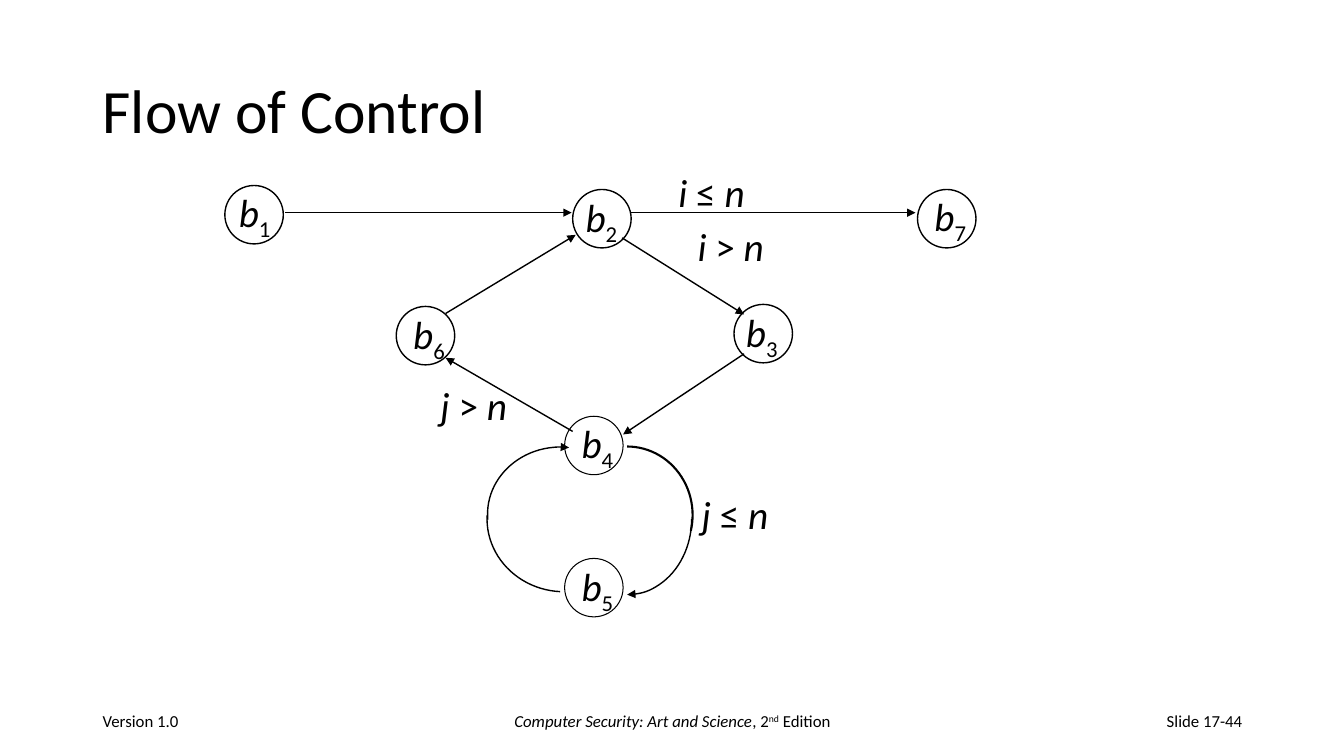
import pptx
import pptx.dml.color
import pptx.enum.shapes
import pptx.enum.text
import pptx.oxml
import pptx.oxml.ns
import pptx.util

PX = 9144  # EMU; 100 px to the inch
THEME = {
    "font": "Calibri",
    "ink": pptx.dml.color.RGBColor(0, 0, 0),
    "title": 44,
    "label": 28,
    "foot": 12,
}
ALIGN = pptx.enum.text.PP_ALIGN
ANCHOR = pptx.enum.text.MSO_ANCHOR
KIND = pptx.enum.shapes.MSO_SHAPE

deck = pptx.Presentation()
deck.slide_width = 1333 * PX
deck.slide_height = 750 * PX
slide = deck.slides.add_slide(deck.slide_layouts[6])
shapes = slide.shapes


def write(runs, box, size, align=ALIGN.LEFT, anchor=ANCHOR.TOP, wrap=True, lead=None):
    """Add a text box; each run is (text, italic, baseline shift in percent)."""
    frame = shapes.add_textbox(*[n * PX for n in box]).text_frame
    frame.word_wrap = wrap
    frame.vertical_anchor = anchor
    para = frame.paragraphs[0]
    para.alignment = align
    para.line_spacing = lead
    for text, slant, shift in runs:
        run = para.add_run()
        run.text = text
        run.font.name = THEME["font"]
        run.font.size = pptx.util.Pt(size)
        run.font.italic = slant
        run.font.color.rgb = THEME["ink"]
        if shift:
            run.font._element.set("baseline", str(shift * 1000))


def stroke(shape, width, arrow=False):
    """Give a shape or connector a plain line, with an arrowhead if asked."""
    shape.line.color.rgb = THEME["ink"]
    shape.line.width = pptx.util.Pt(width)
    if arrow:
        tip = pptx.oxml.parse_xml(
            f'<a:tailEnd {pptx.oxml.ns.nsdecls("a")} type="triangle"/>')
        shape.line._get_or_add_ln().append(tip)


write([("Flow of Control", False, 0)], (92, 40, 1150, 145), THEME["title"],
      anchor=ANCHOR.MIDDLE, lead=0.9)

# Nodes: number, circle left and top, label left and top, line width
nodes = [
    (1, 223, 184, 227, 182, 1),
    (2, 568, 188, 571, 187, 1),
    (7, 910, 188, 917, 186, 1),
    (6, 393, 304, 400, 303, 1),
    (3, 728, 302, 730, 301, 1),
    (4, 560, 413, 567, 411, 0.75),
    (5, 560, 554, 567, 553, 0.75),
]
for num, left, top, x, y, width in nodes:
    ring = shapes.add_shape(KIND.OVAL, left * PX, top * PX, 58 * PX, 58 * PX)
    ring.shadow.inherit = False
    ring.fill.background()
    stroke(ring, width)
    write([("b", True, 0), (str(num), False, -25)], (x, y, 54, 57),
          THEME["label"], wrap=False)

# Straight edges, each from its start to its arrowhead
edges = [
    (283, 211, 567, 211),
    (625, 211, 908, 211),
    (617, 236, 738, 312),
    (568, 428, 442, 355),
    (442, 311, 571, 233),
    (738, 351, 618, 431),
]
for ends in edges:
    edge = shapes.add_connector(pptx.enum.shapes.MSO_CONNECTOR.STRAIGHT,
                                *[n * PX for n in ends])
    stroke(edge, 1, arrow=True)
    edge._element.spPr.append(
        pptx.oxml.parse_xml(f'<a:effectLst {pptx.oxml.ns.nsdecls("a")}/>'))

# Loop between b4 and b5: frame, turn, end angle, line width, arrowhead
arcs = [
    ((557, 443, 130, 136), 0, 8.35, 1.5, False),
    ((547, 451, 150, 128), 90, 0, 1, True),
    ((483, 443, 152, 144), 182.8, 0, 1, False),
    ((489, 438, 131, 142), 264.7, 8.35, 1, True),
]
for box, turn, end, width, arrow in arcs:
    arc = shapes.add_shape(KIND.ARC, *[n * PX for n in box])
    arc.shadow.inherit = False
    arc.fill.background()
    arc.rotation = turn
    arc.adjustments[0] = 162
    arc.adjustments[1] = end
    stroke(arc, width, arrow)

# Conditions on the edges
tests = [
    ("i", ">", (682, 216, 125, 57)),
    ("i", "≤", (663, 162, 90, 57)),
    ("j", ">", (427, 373, 110, 57)),
    ("j", "≤", (686, 482, 105, 57)),
]
for name, sign, box in tests:
    write([(name, True, 0), (f" {sign} ", False, 0), ("n", True, 0)], box,
          THEME["label"])

book = [("Computer Security: Art and Science", True, 0), (", 2", False, 0),
        ("nd", False, 30), (" Edition", False, 0)]
feet = [
    ([("Version 1.0", False, 0)], 92, 300, ALIGN.LEFT),
    (book, 442, 450, ALIGN.CENTER),
    ([("Slide 17-44", False, 0)], 942, 300, ALIGN.RIGHT),
]
for runs, left, wide, align in feet:
    write(runs, (left, 695, wide, 40), THEME["foot"], align=align,
          anchor=ANCHOR.MIDDLE)

deck.save("out.pptx")
